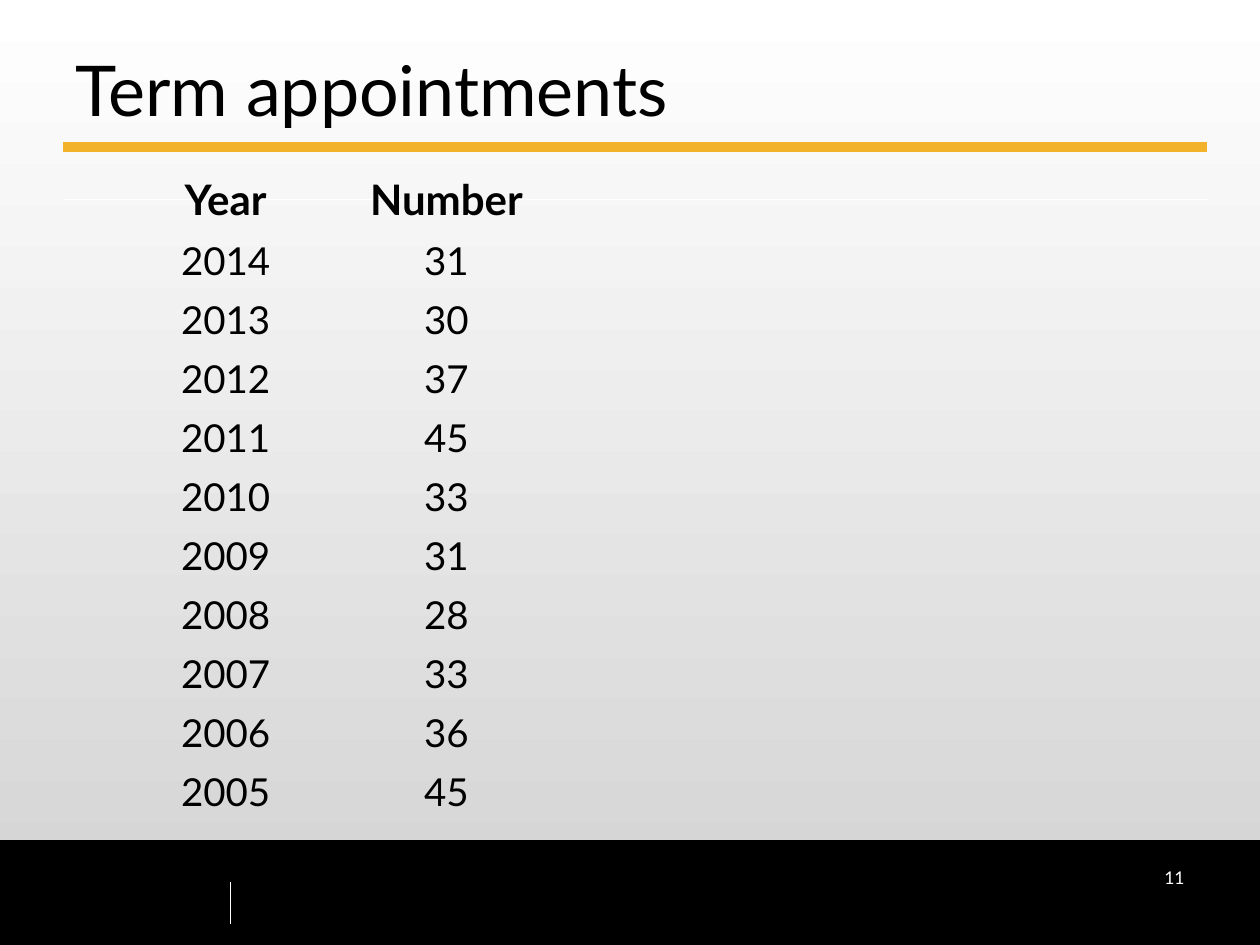
from lxml import etree
from pptx import Presentation
from pptx.dml.color import RGBColor
from pptx.enum.shapes import MSO_CONNECTOR, MSO_SHAPE
from pptx.enum.text import MSO_ANCHOR, PP_ALIGN
from pptx.oxml.ns import qn
from pptx.util import Cm, Pt

STRAIGHT, RECTANGLE = MSO_CONNECTOR.STRAIGHT, MSO_SHAPE.RECTANGLE
LEFT, CENTER, RIGHT = PP_ALIGN.LEFT, PP_ALIGN.CENTER, PP_ALIGN.RIGHT
TOP, BOTTOM = MSO_ANCHOR.TOP, MSO_ANCHOR.BOTTOM

BLACK = RGBColor(0x00, 0x00, 0x00)
WHITE = RGBColor(0xFF, 0xFF, 0xFF)
GREY = RGBColor(0xD2, 0xD2, 0xD2)
GOLD = RGBColor(0xF2, 0xB3, 0x2A)
FONT = "Lato"
NO_GRID_STYLE = "{2D5ABB26-0587-4C30-8999-92F81FD0307C}"

APPOINTMENTS = [
    ("Year", "Number"),
    ("2014", "31"),
    ("2013", "30"),
    ("2012", "37"),
    ("2011", "45"),
    ("2010", "33"),
    ("2009", "31"),
    ("2008", "28"),
    ("2007", "33"),
    ("2006", "36"),
    ("2005", "45"),
]
COLUMN_WIDTHS = (4.02, 4.88)
HEADER_HEIGHT, ROW_HEIGHT = 1.27, 1.19


def write_text(tf, text, align, size, color=BLACK, bold=False):
    p = tf.paragraphs[0]
    p.alignment = align
    r = p.add_run()
    r.text = text
    font = {"name": FONT, "size": Pt(size), "bold": bold}
    for name, value in font.items():
        setattr(r.font, name, value)
    r.font.color.rgb = color


def set_background(s):
    fill = s.background.fill
    fill.gradient()
    fill.gradient_angle = 270
    for stop, color in zip(fill.gradient_stops, (WHITE, GREY)):
        stop.color.rgb = color
    for stop, position in zip(fill.gradient_stops, (0, 1)):
        stop.position = position


def add_footer_band(s):
    sp = s.shapes.add_shape(RECTANGLE, Cm(0), Cm(16.94), Cm(25.4), Cm(2.11))
    sp.shadow.inherit = False
    sp.fill.solid()
    sp.fill.fore_color.rgb = BLACK
    sp.line.color.rgb = BLACK
    sp.line.width = Pt(0.75)


def add_line(s, x1, y1, x2, y2, color, width):
    line = s.shapes.add_connector(STRAIGHT, Cm(x1), Cm(y1), Cm(x2), Cm(y2))
    line.line.color.rgb = color
    line.line.width = Pt(width)
    etree.SubElement(line._element.spPr, qn("a:effectLst"))


def set_title(s, text):
    title = s.shapes.title
    box = {"left": 1.27, "top": 0.85, "width": 22.86, "height": 1.9}
    for name, value in box.items():
        setattr(title, name, Cm(value))
    tf = title.text_frame
    tf.word_wrap = True
    tf.vertical_anchor = BOTTOM
    write_text(tf, text, LEFT, 40)


def add_page_number(s, number):
    tf = s.shapes.add_textbox(Cm(18.2), Cm(17.36), Cm(5.93), Cm(1.27)).text_frame
    tf.word_wrap = True
    tf.vertical_anchor = TOP
    write_text(tf, number, RIGHT, 10, WHITE)


def add_appointment_table(s, rows):
    height = HEADER_HEIGHT + ROW_HEIGHT * (len(rows) - 1)
    frame = s.shapes.add_table(len(rows), len(COLUMN_WIDTHS), Cm(2.54), Cm(3.39),
                               Cm(sum(COLUMN_WIDTHS)), Cm(height))
    table = frame.table
    table._tbl.tblPr.find(qn("a:tableStyleId")).text = NO_GRID_STYLE
    table.horz_banding = False
    for column, width in zip(table.columns, COLUMN_WIDTHS):
        column.width = Cm(width)
    for i, values in enumerate(rows):
        header = i == 0
        table.rows[i].height = Cm(HEADER_HEIGHT if header else ROW_HEIGHT)
        for cell, value in zip(table.rows[i].cells, values):
            cell.fill.background()
            write_text(cell.text_frame, value, CENTER, 24 if header else 22, bold=header)


def main():
    prs = Presentation()
    prs.slide_width, prs.slide_height = Cm(25.4), Cm(19.05)
    s = prs.slides.add_slide(prs.slide_layouts[5])
    set_background(s)
    add_footer_band(s)
    add_line(s, 4.65, 17.78, 4.65, 18.63, WHITE, 0.75)
    add_line(s, 1.27, 4.02, 24.34, 4.02, WHITE, 0.75)
    add_line(s, 1.27, 2.96, 24.34, 2.96, GOLD, 6)
    set_title(s, "Term appointments")
    add_page_number(s, "11")
    add_appointment_table(s, APPOINTMENTS)
    prs.save("out.pptx")


if __name__ == "__main__":
    main()
